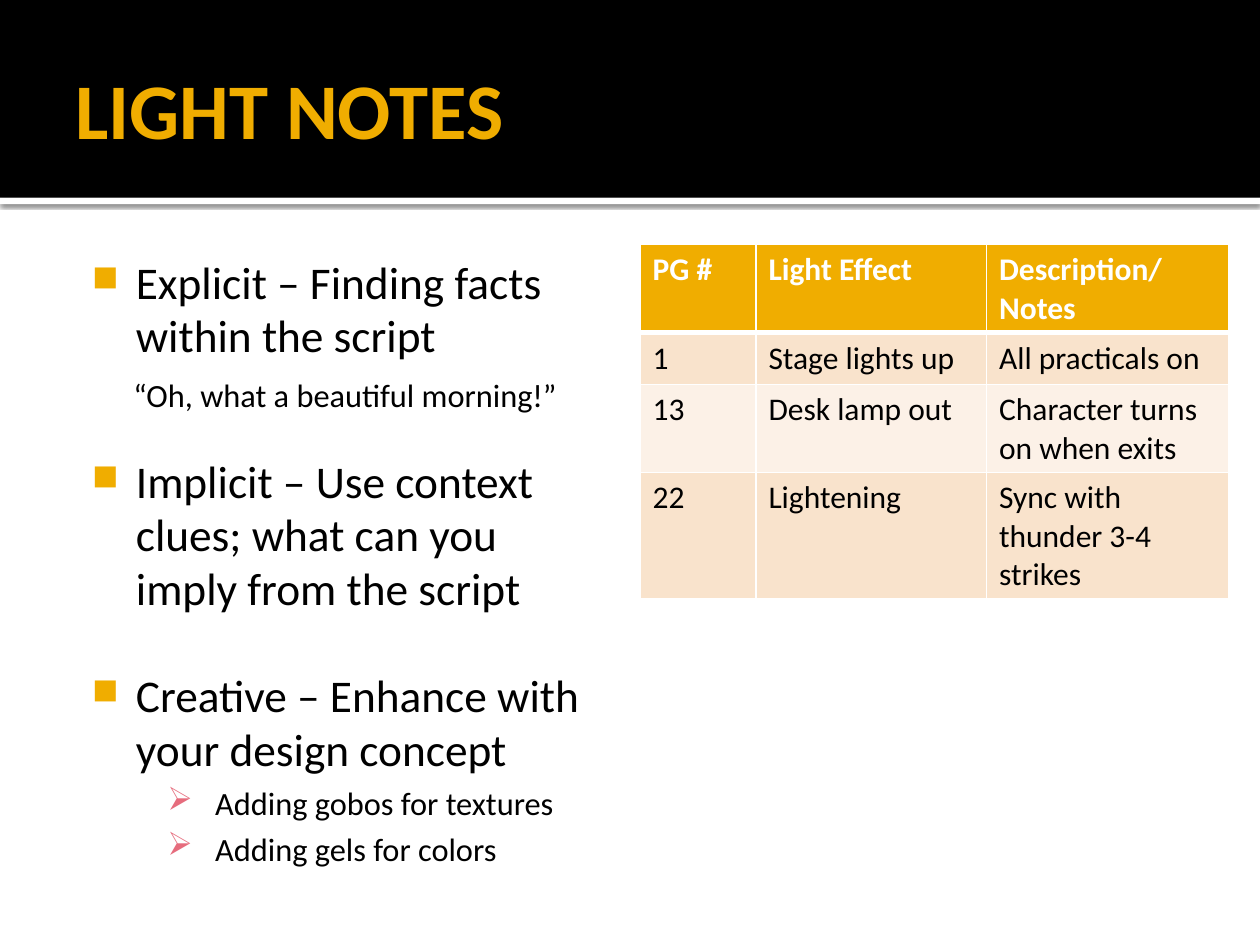
"""Build the light notes slide: title band, bulleted notes and a cue table."""
import pptx
import pptx.util
import pptx.dml.color
import pptx.enum.shapes
import pptx.enum.text
import pptx.oxml
import pptx.oxml.ns

Inches, Pt = pptx.util.Inches, pptx.util.Pt
MIDDLE = pptx.enum.text.MSO_ANCHOR.MIDDLE
HUES = {"gold": "F0AD00", "rose": "E66C7D", "black": "000000", "white": "FFFFFF",
        "peach": "F9E3CC", "cream": "FCF1E7"}


def node(host, xml):
    tag, rest = xml.split(" ", 1)
    host.append(pptx.oxml.parse_xml(f"<a:{tag} {pptx.oxml.ns.nsdecls('a')} {rest}"))


def write(para, text, size=18, hue="black", bold=False, left=0, hang=0,
          mark=None, tint="gold", scale=100, before=0, after=0, pitch=1.0):
    run = para.add_run()
    run.text = text
    font = run.font
    font.name, font.size, font.bold = "Calibri", Pt(size), bold
    font.color.rgb = pptx.dml.color.RGBColor.from_string(HUES[hue])
    para.line_spacing = pitch
    para.space_before, para.space_after = Pt(before), Pt(after)
    props = para._p.get_or_add_pPr()
    props.set("marL", str(Inches(left)))
    props.set("indent", str(Inches(-hang)))
    if mark:
        node(props, f'buClr ><a:srgbClr val="{HUES[tint]}"/></a:buClr>')
        node(props, f'buSzPct val="{scale * 1000}"/>')
        node(props, f'buChar char="{mark}"/>')


deck = pptx.Presentation()
deck.slide_width, deck.slide_height = Inches(10), Inches(7.5)
slide = deck.slides.add_slide(deck.slide_layouts[6])
shapes = slide.shapes

for top, high, hue in [(1.57, 0.05, "white"), (0, 1.57, "black")]:
    band = shapes.add_shape(pptx.enum.shapes.MSO_SHAPE.RECTANGLE,
                            0, Inches(top), Inches(10), Inches(high))
    band.shadow.inherit = False
    band.fill.solid()
    band.fill.fore_color.rgb = pptx.dml.color.RGBColor.from_string(HUES[hue])
    band.line.fill.background()
    if hue == "white":
        glow = band._element.spPr.find(pptx.oxml.ns.qn("a:effectLst"))
        node(glow, f'outerShdw blurRad="{Pt(2.5)}" dist="{Pt(0.8)}" dir="5400000" '
                   'algn="tl" rotWithShape="0"><a:srgbClr val="000000">'
                   '<a:alpha val="60000"/></a:srgbClr></a:outerShdw>')

title = shapes.add_textbox(Inches(0.5), Inches(0.17), Inches(9), Inches(1.37)).text_frame
title.word_wrap = True
title.vertical_anchor = MIDDLE
title.margin_right = Inches(0.05)
write(title.paragraphs[0], "LIGHT NOTES", size=45, hue="gold", bold=True)

main = dict(size=25.9, left=0.48, hang=0.35, mark="■", scale=80, pitch=0.98)
sub = dict(size=18.5, left=1.11, hang=0.38, mark="➢", tint="rose", before=3.7)
notes = [
    ("Explicit – Finding facts within the script", main),
    ("“Oh, what a beautiful morning!”", dict(size=18.5, left=0.46, before=6.5, after=24)),
    ("Implicit – Use context clues; what can you imply from the script",
     dict(main, after=31)),
    ("Creative – Enhance with your design concept", main),
    ("Adding gobos for textures", sub),
    ("Adding gels for colors", sub),
]
body = shapes.add_textbox(Inches(0.5), Inches(1.94), Inches(4.42), Inches(5.06)).text_frame
body.word_wrap = True
body.margin_top = Inches(0.1)
for i, (text, style) in enumerate(notes):
    write(body.add_paragraph() if i else body.paragraphs[0], text, **style)

cues = [
    ("PG #", "Light Effect", "Description/Notes"),
    ("1", "Stage lights up", "All practicals on"),
    ("13", "Desk lamp out", "Character turns on when exits"),
    ("22", "Lightening", "Sync with thunder 3-4 strikes"),
]
wides = [0.92, 1.83, 1.92]
table = shapes.add_table(len(cues), len(wides), Inches(5.08), Inches(1.94),
                         Inches(sum(wides)), Inches(0.41 * len(cues))).table
for col, wide in zip(table.columns, wides):
    col.width = Inches(wide)
for r, cue in enumerate(cues):
    head = r == 0
    fill = "gold" if head else ("cream", "peach")[r % 2]
    for c, text in enumerate(cue):
        cell = table.cell(r, c)
        props = cell._tc.get_or_add_tcPr()
        for side in "LRTB":
            thick = 3 if (r, side) in [(0, "B"), (1, "T")] else 1
            node(props, f'ln{side} w="{Pt(thick)}"><a:solidFill><a:srgbClr '
                        f'val="{HUES["white"]}"/></a:solidFill></a:ln{side}>')
        cell.fill.solid()
        cell.fill.fore_color.rgb = pptx.dml.color.RGBColor.from_string(HUES[fill])
        write(cell.text_frame.paragraphs[0], text, bold=head,
              hue="white" if head else "black")

deck.save("out.pptx")
